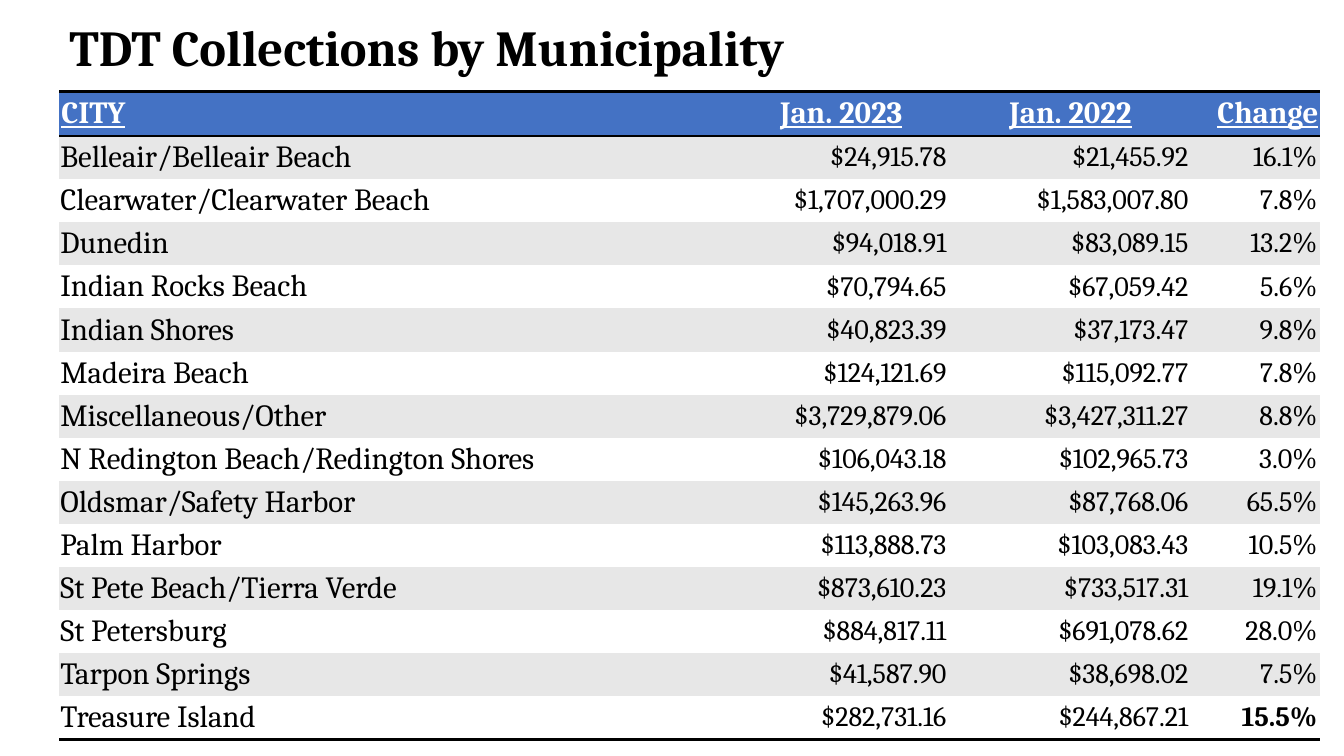
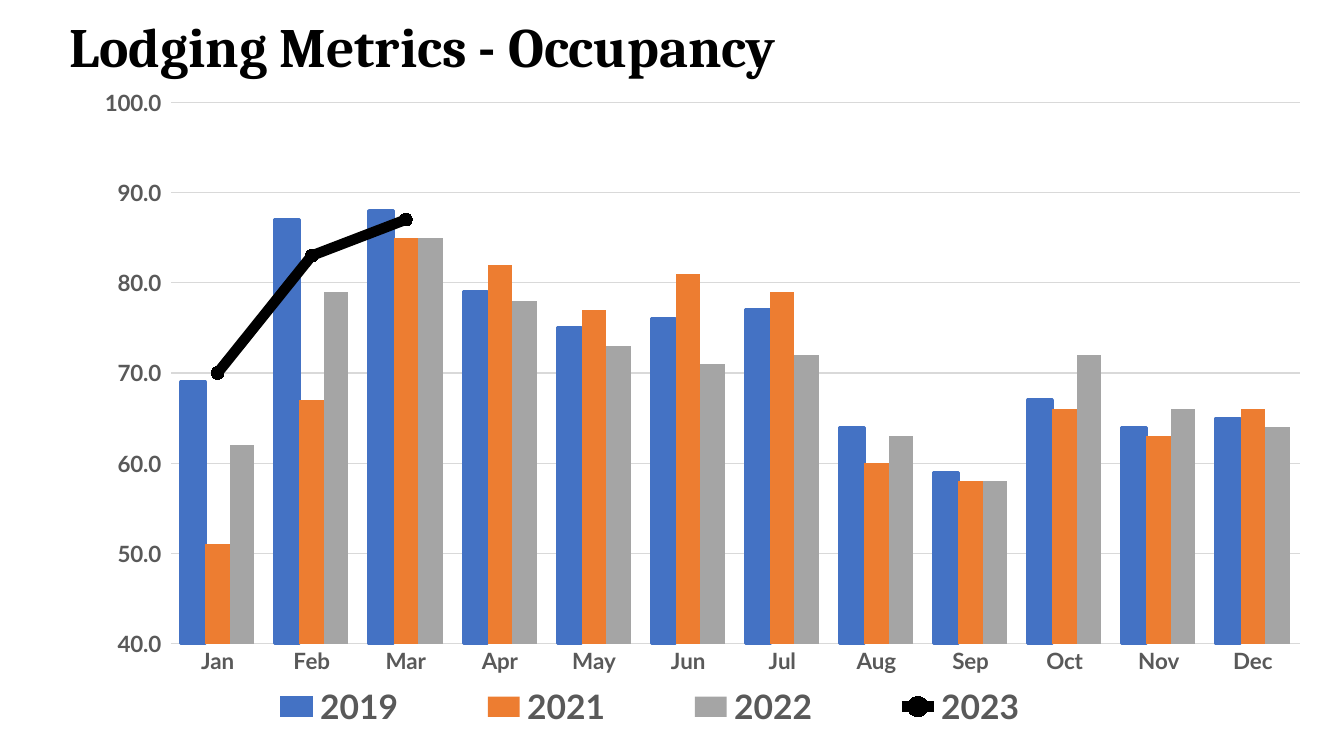
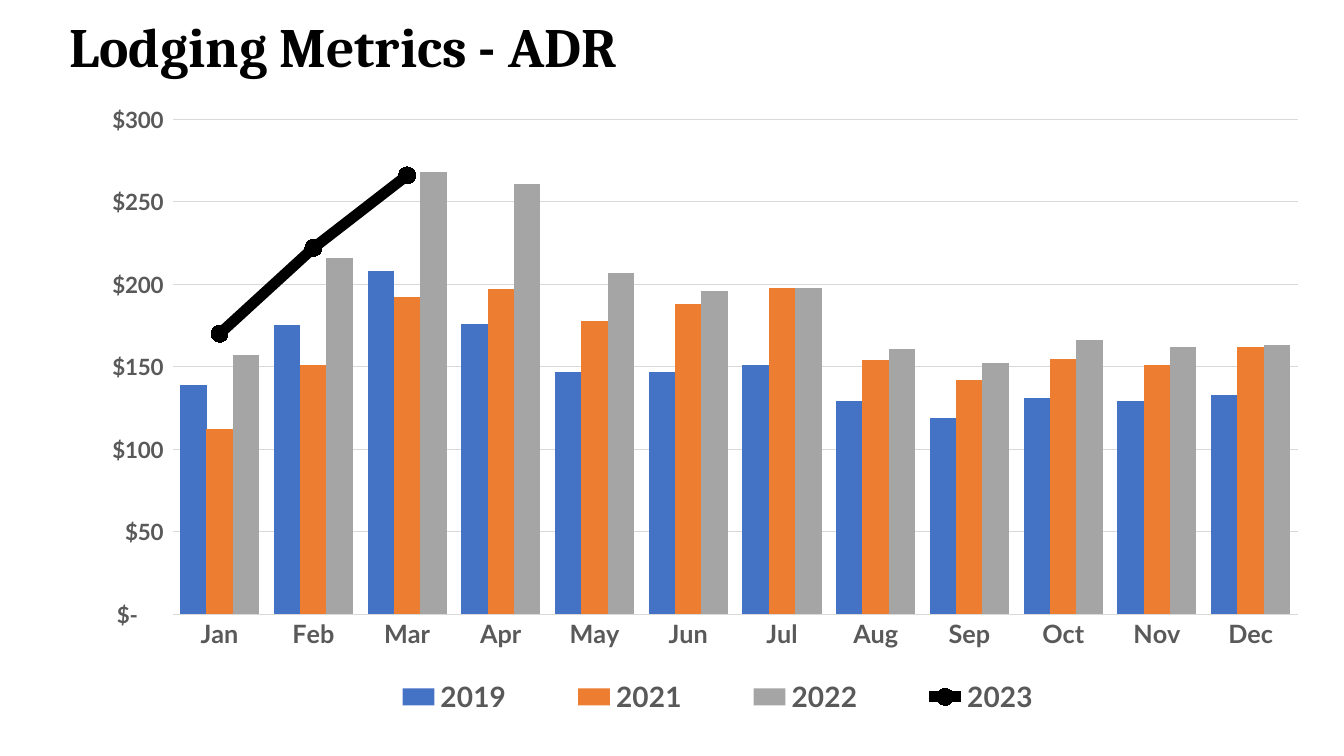
from pptx import Presentation
from pptx.chart.data import CategoryChartData
from pptx.dml.color import RGBColor
from pptx.enum.chart import XL_CHART_TYPE, XL_LEGEND_POSITION, XL_MARKER_STYLE, XL_TICK_MARK
from pptx.enum.text import MSO_ANCHOR, PP_ALIGN
from pptx.oxml.ns import qn
from pptx.oxml.xmlchemy import OxmlElement
from pptx.util import Pt

CLUSTERED = XL_CHART_TYPE.COLUMN_CLUSTERED
LEGEND_BOTTOM = XL_LEGEND_POSITION.BOTTOM
CIRCLE = XL_MARKER_STYLE.CIRCLE
NO_TICK = XL_TICK_MARK.NONE
MIDDLE = MSO_ANCHOR.MIDDLE
LEFT, CENTER, RIGHT = PP_ALIGN.LEFT, PP_ALIGN.CENTER, PP_ALIGN.RIGHT

SERIF, SANS = "Cambria", "Lato"
BLACK, WHITE, BLUE, ORANGE, GRAY = "000000", "FFFFFF", "4472C4", "ED7D31", "A5A5A5"
BAND, LABEL, GRID = "E7E7E7", "595959", "D9D9D9"
NO_STYLE = "{2D5ABB26-0587-4C30-8999-92F81FD0307C}"
TITLE_BOX = (42.5, 10.8, 885, 49.7)

MONTHS = ["Jan", "Feb", "Mar", "Apr", "May", "Jun", "Jul", "Aug", "Sep", "Oct", "Nov", "Dec"]
YEAR_COLORS = {"2019": BLUE, "2021": ORANGE, "2022": GRAY, "2023": BLACK}

HEADINGS = ["CITY", "Jan. 2023", "Jan. 2022", "Change"]
HEADING_ALIGNS = [LEFT, CENTER, CENTER, RIGHT]
COLLECTIONS = [
    ("Belleair/Belleair Beach", "$24,915.78", "$21,455.92", "16.1%"),
    ("Clearwater/Clearwater Beach", "$1,707,000.29", "$1,583,007.80", "7.8%"),
    ("Dunedin", "$94,018.91", "$83,089.15", "13.2%"),
    ("Indian Rocks Beach", "$70,794.65", "$67,059.42", "5.6%"),
    ("Indian Shores", "$40,823.39", "$37,173.47", "9.8%"),
    ("Madeira Beach", "$124,121.69", "$115,092.77", "7.8%"),
    ("Miscellaneous/Other", "$3,729,879.06", "$3,427,311.27", "8.8%"),
    ("N Redington Beach/Redington Shores", "$106,043.18", "$102,965.73", "3.0%"),
    ("Oldsmar/Safety Harbor", "$145,263.96", "$87,768.06", "65.5%"),
    ("Palm Harbor", "$113,888.73", "$103,083.43", "10.5%"),
    ("St Pete Beach/Tierra Verde", "$873,610.23", "$733,517.31", "19.1%"),
    ("St Petersburg", "$884,817.11", "$691,078.62", "28.0%"),
    ("Tarpon Springs", "$41,587.90", "$38,698.02", "7.5%"),
    ("Treasure Island", "$282,731.16", "$244,867.21", "15.5%"),
]

OCCUPANCY = dict(
    values={
        "2019": [69, 87, 88, 79, 75, 76, 77, 64, 59, 67, 64, 65],
        "2021": [51, 67, 85, 82, 77, 81, 79, 60, 58, 66, 63, 66],
        "2022": [62, 79, 85, 78, 73, 71, 72, 63, 58, 72, 66, 64],
        "2023": [70, 83, 87] + [None] * 9,
    },
    scale=(40, 100, 10),
    number_format='_(* #,##0.0_);_(* \\(#,##0.0\\);_(* "-"??_);_(@_)',
    month_size=16, legend_size=24, gap=84, overlap=0,
    trend_width=7.5, marker_size=9, outline_2019=2.25,
    plot_area=(0.088, 0.027, 0.895, 0.825),
    legend_area=(0.113, 0.898, 0.71, 0.1),
)
ADR = dict(
    values={
        "2019": [139, 175, 208, 176, 147, 147, 151, 129, 119, 131, 129, 133],
        "2021": [112, 151, 192, 197, 178, 188, 198, 154, 142, 155, 151, 162],
        "2022": [157, 216, 268, 261, 207, 196, 198, 161, 152, 166, 162, 163],
        "2023": [170, 222, 266] + [None] * 9,
    },
    scale=(0, 300, 50),
    number_format='_("$"* #,##0_);_("$"* \\(#,##0\\);_("$"* "-"??_);_(@_)',
    month_size=18, legend_size=20, gap=55, overlap=1,
    trend_width=7.75, marker_size=12, outline_2019=0,
    plot_area=(0.08, 0.032, 0.908, 0.772),
    legend_area=(0.215, 0.883, 0.61, 0.1),
)


def rgb(color):
    return RGBColor.from_string(color)


def style_font(font, face, size, color, bold=False):
    font.name, font.size, font.bold = face, Pt(size), bold
    font.color.rgb = rgb(color)


def paint(fill, color):
    fill.solid()
    fill.fore_color.rgb = rgb(color)


def draw_line(line, color, width):
    paint(line.fill, color)
    line.width = Pt(width)


def add_child(parent, tag, value=None):
    child = OxmlElement(tag)
    if value is not None:
        child.set("val", str(value))
    parent.append(child)
    return child


def add_titled_slide(deck, title, size):
    slide = deck.slides.add_slide(deck.slide_layouts[6])
    frame = slide.shapes.add_textbox(*map(Pt, TITLE_BOX)).text_frame
    frame.word_wrap = True
    frame.vertical_anchor = MIDDLE
    frame.text = title
    frame.paragraphs[0].line_spacing = 0.9
    style_font(frame.paragraphs[0].runs[0].font, SERIF, size, BLACK, True)
    return slide


def add_rules(cell, sides):
    properties = cell._tc.get_or_add_tcPr()
    for position, side in enumerate(sides):
        rule = OxmlElement("a:" + side)
        rule.set("w", str(Pt(2)))
        color = OxmlElement("a:srgbClr")
        color.set("val", BLACK)
        add_child(rule, "a:solidFill").append(color)
        properties.insert(position, rule)


def fill_cell(cell, text, align, size, color, fill, insets, bold=False, underline=False):
    cell.text = text
    cell.vertical_anchor = MIDDLE
    cell.margin_left = cell.margin_right = Pt(insets[0])
    cell.margin_top = cell.margin_bottom = Pt(insets[1])
    paragraph = cell.text_frame.paragraphs[0]
    paragraph.alignment = align
    font = paragraph.runs[0].font
    style_font(font, SERIF, size, color, bold)
    font.underline = underline
    paint(cell.fill, fill)


def add_collections_table(slide, left, top, width, height):
    widths = [481, 154.8, 172.8]
    widths.append(width - sum(widths))
    header_height = 31.7
    row_height = (height - header_height) / len(COLLECTIONS)
    frame = slide.shapes.add_table(len(COLLECTIONS) + 1, len(HEADINGS),
                                   Pt(left), Pt(top), Pt(width), Pt(height))
    next(frame._element.iter(qn("a:tableStyleId"))).text = NO_STYLE
    table = frame.table
    table.first_row = table.horz_banding = False
    for column, column_width in zip(table.columns, widths):
        column.width = Pt(column_width)
    for index, row in enumerate(table.rows):
        row.height = Pt(row_height if index else header_height)

    for column, heading in enumerate(HEADINGS):
        cell = table.cell(0, column)
        fill_cell(cell, heading, HEADING_ALIGNS[column], 22, WHITE, BLUE, (1.4, 0.7), True, True)
        add_rules(cell, ["lnT", "lnB"])
    for index, record in enumerate(COLLECTIONS, 1):
        last_row = index == len(COLLECTIONS)
        fill = BAND if index % 2 else WHITE
        for column, text in enumerate(record):
            cell = table.cell(index, column)
            if column == 0:
                fill_cell(cell, text, LEFT, 22, BLACK, fill, (0.7, 0.4))
            else:
                fill_cell(cell, text, RIGHT, 20, BLACK, fill, (2.2, 1.4),
                          bold=last_row and column == 3)
            if last_row:
                add_rules(cell, ["lnB"])


def set_layout(parent, position, area, inner=False):
    for old in parent.findall(qn("c:layout")):
        parent.remove(old)
    layout = OxmlElement("c:layout")
    manual = add_child(layout, "c:manualLayout")
    if inner:
        add_child(manual, "c:layoutTarget", "inner")
    add_child(manual, "c:xMode", "edge")
    add_child(manual, "c:yMode", "edge")
    for side, share in zip("xywh", area):
        add_child(manual, "c:" + side, share)
    parent.insert(position, layout)


def move_last_series_to_line(plot_area):
    columns = plot_area.find(qn("c:barChart"))
    trend = columns.findall(qn("c:ser"))[-1]
    for unused in trend.findall(qn("c:invertIfNegative")):
        trend.remove(unused)
    lines = OxmlElement("c:lineChart")
    add_child(lines, "c:grouping", "standard")
    add_child(lines, "c:varyColors", 0)
    lines.append(trend)
    add_child(lines, "c:marker", 1)
    for axis in columns.findall(qn("c:axId")):
        add_child(lines, "c:axId", axis.get("val"))
    columns.addnext(lines)


def style_axes(chart, metric):
    months, amounts = chart.category_axis, chart.value_axis
    for axis, size in ((months, metric["month_size"]), (amounts, 16)):
        axis.major_tick_mark = axis.minor_tick_mark = NO_TICK
        style_font(axis.tick_labels.font, SANS, size, LABEL, True)
    draw_line(months.format.line, GRID, 0.75)
    amounts.format.line.fill.background()
    amounts.has_major_gridlines = True
    draw_line(amounts.major_gridlines.format.line, GRID, 0.75)
    amounts.minimum_scale, amounts.maximum_scale, amounts.major_unit = metric["scale"]
    amounts.tick_labels.number_format = metric["number_format"]
    amounts.tick_labels.number_format_is_linked = False


def add_metric_chart(slide, left, top, width, height, metric):
    data = CategoryChartData()
    data.categories = MONTHS
    for year, values in metric["values"].items():
        data.add_series(year, values)
    chart = slide.shapes.add_chart(CLUSTERED, Pt(left), Pt(top), Pt(width), Pt(height), data).chart
    chart.has_title = False
    style_font(chart.font, SANS, 10, BLACK)
    style_axes(chart, metric)

    plot_area = chart.element.find(qn("c:chart")).find(qn("c:plotArea"))
    move_last_series_to_line(plot_area)
    set_layout(plot_area, 0, metric["plot_area"], inner=True)

    columns, lines = chart.plots
    columns.vary_by_categories = False
    columns.gap_width, columns.overlap = metric["gap"], metric["overlap"]
    for series in columns.series:
        paint(series.format.fill, YEAR_COLORS[series.name])
    if metric["outline_2019"]:
        draw_line(columns.series[0].format.line, BLUE, metric["outline_2019"])

    trend = lines.series[0]
    trend.smooth = False
    draw_line(trend.format.line, YEAR_COLORS[trend.name], metric["trend_width"])
    trend.marker.style, trend.marker.size = CIRCLE, metric["marker_size"]
    paint(trend.marker.format.fill, BLACK)
    draw_line(trend.marker.format.line, BLACK, 0.75)

    chart.has_legend = True
    legend = chart.legend
    legend.position = LEGEND_BOTTOM
    legend.include_in_layout = False
    style_font(legend.font, SANS, metric["legend_size"], LABEL, True)
    set_layout(chart.element.find(qn("c:chart")).find(qn("c:legend")), 1, metric["legend_area"])


def main():
    deck = Presentation()
    deck.slide_width, deck.slide_height = Pt(960), Pt(540)

    slide = add_titled_slide(deck, "TDT Collections by Municipality", 36)
    add_collections_table(slide, 42.5, 65.5, 900.7, 463)

    slide = add_titled_slide(deck, "Lodging Metrics - Occupancy", 39.6)
    add_metric_chart(slide, 42.5, 60.5, 901.4, 468.7, OCCUPANCY)

    slide = add_titled_slide(deck, "Lodging Metrics - ADR", 39.6)
    add_metric_chart(slide, 52.6, 70.6, 884.9, 457.9, ADR)

    deck.save("out.pptx")


if __name__ == "__main__":
    main()
